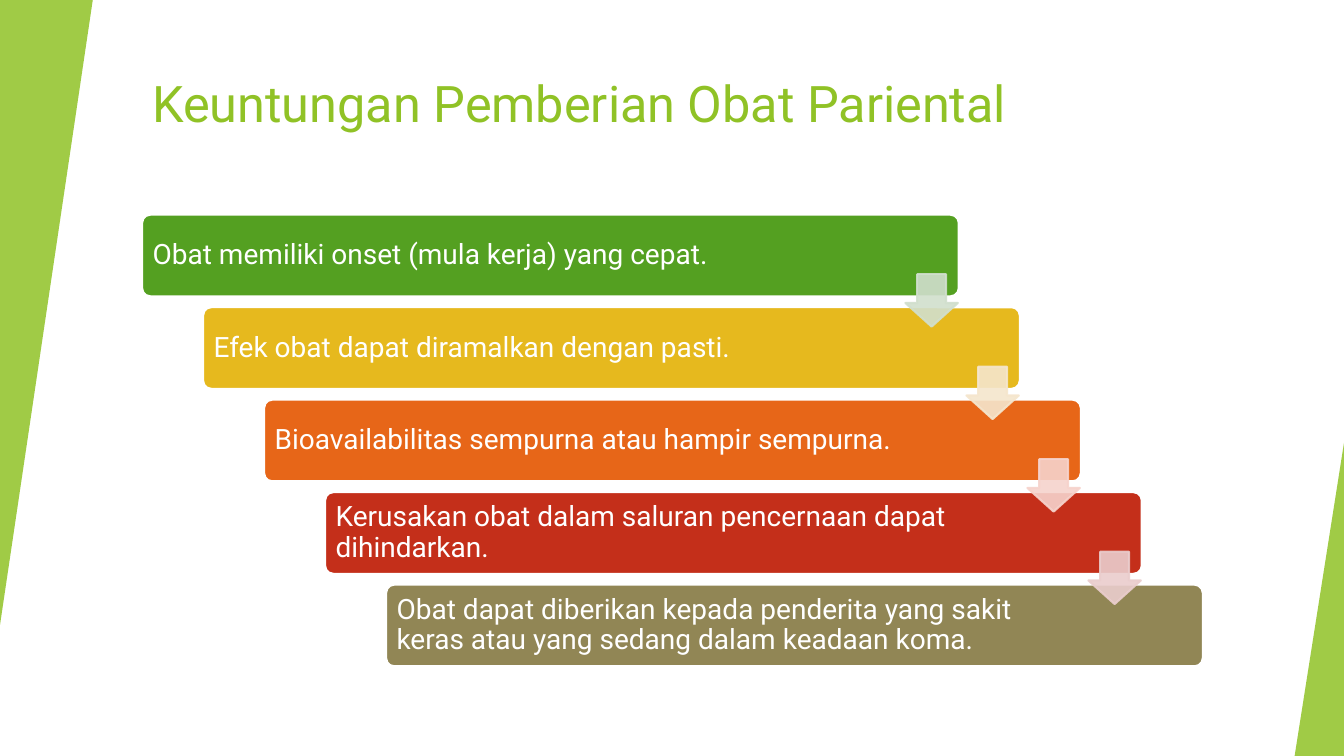
from lxml import etree
from pptx import Presentation
from pptx.dml.color import RGBColor
from pptx.enum import shapes, text
from pptx.oxml.ns import qn
from pptx.util import Inches, Pt

# Content
TITLE = "Keuntungan Pemberian Obat Pariental"
# (advantage, bar colour, colour of the arrow to the next bar)
ADVANTAGES = [
    ("Obat memiliki onset (mula kerja) yang cepat.", "green", "pale green"),
    ("Efek obat dapat diramalkan dengan pasti.", "yellow", "pale yellow"),
    ("Bioavailabilitas sempurna atau hampir sempurna.", "orange", "pale orange"),
    ("Kerusakan obat dalam saluran pencernaan dapat dihindarkan.", "red", "pale red"),
    ("Obat dapat diberikan kepada penderita yang sakit keras "
     "atau yang sedang dalam keadaan koma.", "olive", None),
]
COLORS = {
    "white": "FFFFFF", "lime": "90C226",
    "green": "54A021", "yellow": "E6B91E", "orange": "E76618",
    "red": "C42F1A", "olive": "918655",
    "pale green": "D1DFCD", "pale yellow": "F5E6CD",
    "pale orange": "F6D3CC", "pale red": "EACDCD",
}
FONT = "Roboto"

# Staircase layout, in inches
FIRST_LEFT, LAST_LEFT = 1.41, 3.83
FIRST_TOP, LAST_TOP = 2.13, 5.8
BAR_WIDTH, BAR_HEIGHT = 8.1, 0.81
ARROW_SIZE, ARROW_DX, ARROW_DY = 0.52, 7.57, 0.59
INSET, RIGHT_INSET = 0.08, 1.22
STEP_X = (LAST_LEFT - FIRST_LEFT) / (len(ADVANTAGES) - 1)
STEP_Y = (LAST_TOP - FIRST_TOP) / (len(ADVANTAGES) - 1)


def rgb(name):
    return RGBColor.from_string(COLORS[name])


def set_opacity(shape, percent):
    for color in shape._element.spPr.iter(qn("a:srgbClr")):
        etree.SubElement(color, qn("a:alpha"), val=str(percent * 1000))


def write(frame, content, size, color, anchor, insets, spacing=1.0):
    frame.word_wrap = True
    frame.auto_size = text.MSO_AUTO_SIZE.NONE
    frame.vertical_anchor = anchor
    (frame.margin_left, frame.margin_top,
     frame.margin_right, frame.margin_bottom) = map(Inches, insets)
    paragraph = frame.paragraphs[0]
    paragraph.alignment = text.PP_ALIGN.LEFT
    paragraph.line_spacing = spacing
    run = paragraph.add_run()
    run.text = content
    run.font.name = FONT
    run.font.size = Pt(size)
    run.font.color.rgb = rgb(color)


def add_shape(slide, kind, box, fill, line=None, adjustments=(), opacity=100):
    shape = slide.shapes.add_shape(kind, *map(Inches, box))
    shape.shadow.inherit = False
    shape.fill.solid()
    shape.fill.fore_color.rgb = rgb(fill)
    if line:
        shape.line.color.rgb = rgb(line)
        shape.line.width = Pt(1.5)
    else:
        shape.line.fill.background()
    for index, value in enumerate(adjustments):
        shape.adjustments[index] = value
    if opacity < 100:
        set_opacity(shape, opacity)
    return shape


def main():
    presentation = Presentation()
    presentation.slide_width = Inches(13.33)
    presentation.slide_height = Inches(7.5)
    slide = presentation.slides.add_slide(presentation.slide_layouts[5])
    kinds = shapes.MSO_SHAPE

    # Title
    title = slide.shapes.title
    title.left, title.top, title.width, title.height = map(
        Inches, (1.41, 0.67, 11.15, 1.2))
    write(title.text_frame, TITLE, 36, "lime", text.MSO_ANCHOR.TOP,
          (0.1, 0.05, 0.1, 0.05))

    # Side wedges
    for box, rotation in (((0, 0, 0.92, 6.2), 180), ((12.84, 4.39, 0.49, 3.11), 0)):
        wedge = add_shape(slide, kinds.ISOSCELES_TRIANGLE, box, "lime",
                          adjustments=(1,), opacity=85)
        wedge.rotation = rotation

    # Staircase of bars
    corners = [(FIRST_LEFT + i * STEP_X, FIRST_TOP + i * STEP_Y)
               for i in range(len(ADVANTAGES))]
    for (left, top), (advantage, color, _) in zip(corners, ADVANTAGES):
        bar = add_shape(slide, kinds.ROUNDED_RECTANGLE,
                        (left, top, BAR_WIDTH, BAR_HEIGHT), color, "white", (0.1,))
        write(bar.text_frame, advantage, 20, "white", text.MSO_ANCHOR.MIDDLE,
              (INSET, INSET, RIGHT_INSET, INSET), spacing=0.9)

    # Arrows between the bars
    for (left, top), (_, _, color) in zip(corners, ADVANTAGES):
        if color:
            add_shape(slide, kinds.DOWN_ARROW,
                      (left + ARROW_DX, top + ARROW_DY, ARROW_SIZE, ARROW_SIZE),
                      color, color, (0.55, 0.45), 90)

    presentation.save("out.pptx")


if __name__ == "__main__":
    main()
